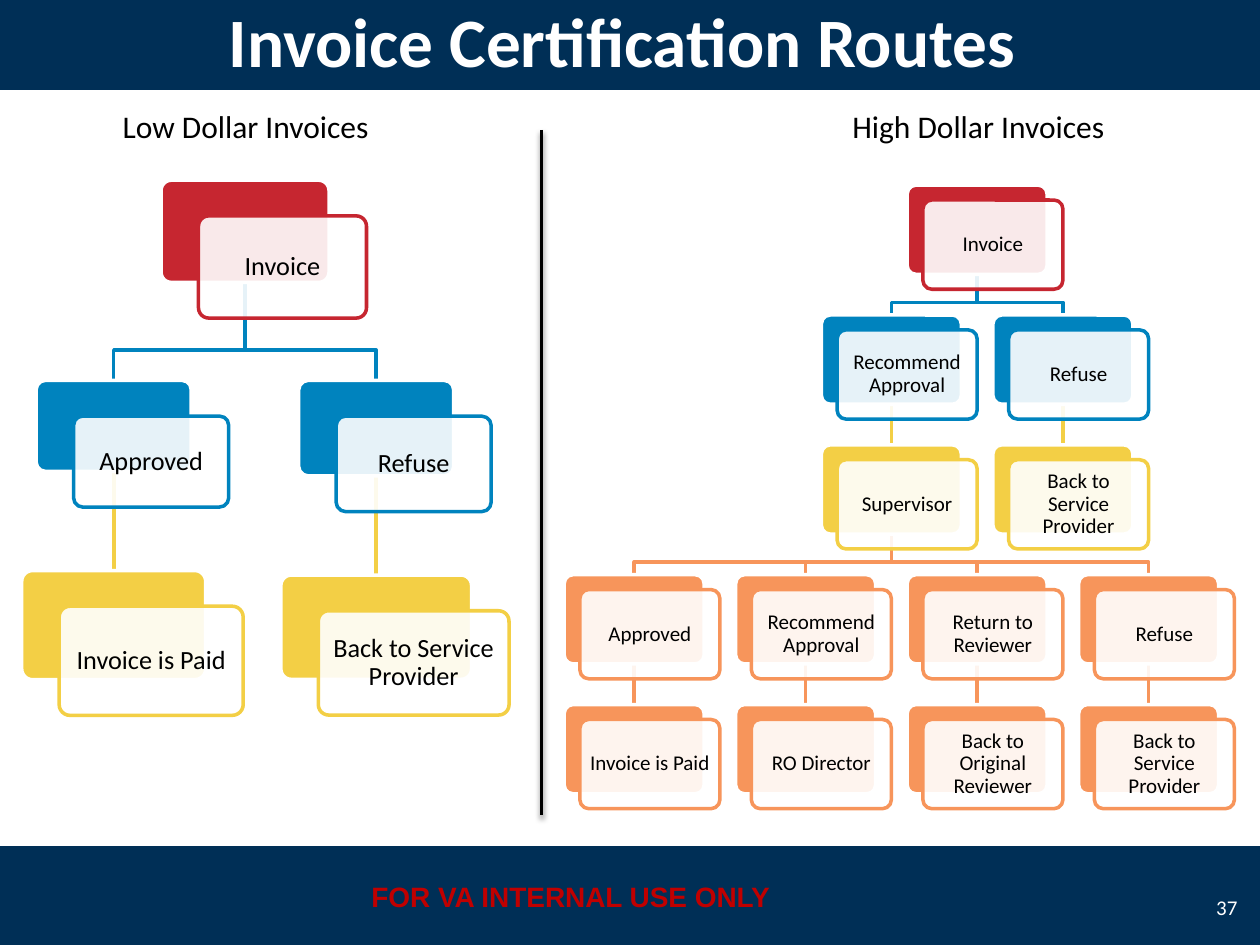
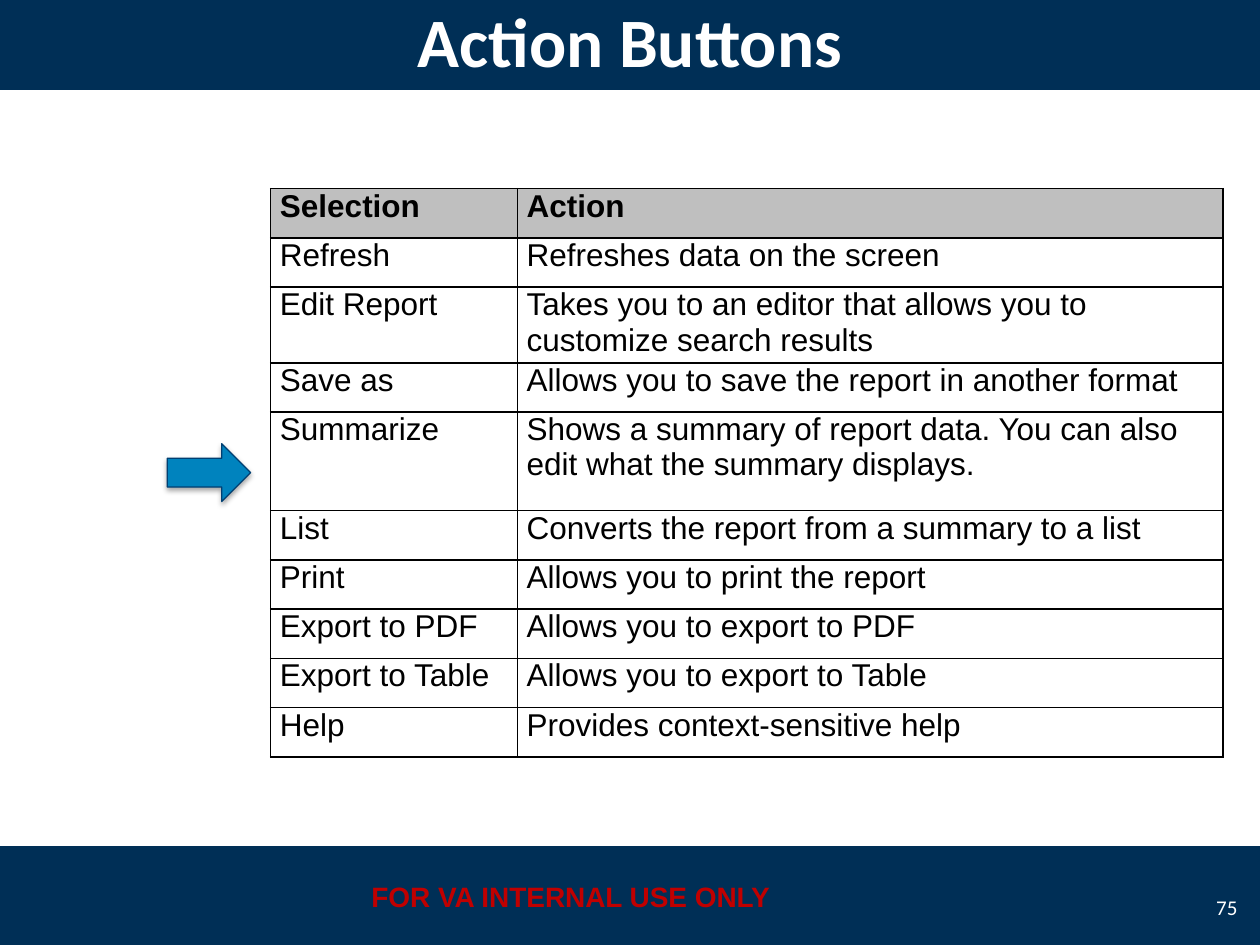
from lxml import etree
from pptx import Presentation
from pptx.dml.color import RGBColor
from pptx.enum.shapes import MSO_CONNECTOR, MSO_SHAPE
from pptx.enum.text import MSO_ANCHOR, PP_ALIGN
from pptx.oxml.ns import qn
from pptx.util import Pt

NAVY = RGBColor(0x00, 0x2F, 0x56)
EDGE = RGBColor(0x00, 0x3F, 0x72)
BLUE = RGBColor(0x00, 0x83, 0xBE)
RED = RGBColor(0xC6, 0x26, 0x30)
GOLD = RGBColor(0xF3, 0xCF, 0x45)
CORAL = RGBColor(0xF7, 0x95, 0x5B)
NOTE = RGBColor(0xC0, 0x00, 0x00)
GREY = RGBColor(0xBF, 0xBF, 0xBF)
BLACK = RGBColor(0x00, 0x00, 0x00)
WHITE = RGBColor(0xFF, 0xFF, 0xFF)

RECT, ROUND, ARROW = MSO_SHAPE.RECTANGLE, MSO_SHAPE.ROUNDED_RECTANGLE, MSO_SHAPE.RIGHT_ARROW
STRAIGHT = MSO_CONNECTOR.STRAIGHT
LEFT, CENTER, RIGHT = PP_ALIGN.LEFT, PP_ALIGN.CENTER, PP_ALIGN.RIGHT
TOP, MIDDLE = MSO_ANCHOR.TOP, MSO_ANCHOR.MIDDLE

LOW = [
    ("Invoice", RED, None, (140, 103, 96, 58.4)),
    ("Approved", BLUE, 0, (65, 217.4, 88.6, 52)),
    ("Refuse", BLUE, 0, (215, 217.4, 88.6, 54.6)),
    ("Invoice is Paid", GOLD, 1, (65, 326, 105.2, 62.4)),
    ("Back to Service Provider", GOLD, 2, (215, 328.6, 109, 59.6)),
]

HIGH = [
    ("Invoice", RED, None, 2, 0),
    ("Recommend Approval", BLUE, 0, 1.5, 1),
    ("Refuse", BLUE, 0, 2.5, 1),
    ("Supervisor", GOLD, 1, 1.5, 2),
    ("Back to Service Provider", GOLD, 2, 2.5, 2),
    ("Approved", CORAL, 3, 0, 3),
    ("Recommend Approval", CORAL, 3, 1, 3),
    ("Return to Reviewer", CORAL, 3, 2, 3),
    ("Refuse", CORAL, 3, 3, 3),
    ("Invoice is Paid", CORAL, 5, 0, 4),
    ("RO Director", CORAL, 6, 1, 4),
    ("Back to Original Reviewer", CORAL, 7, 2, 4),
    ("Back to Service Provider", CORAL, 8, 3, 4),
]

ACTIONS = [
    ("Selection", "Action"),
    ("Refresh", "Refreshes data on the screen"),
    ("Edit Report", "Takes you to an editor that allows you to customize search results"),
    ("Save as", "Allows you to save the report in another format"),
    ("Summarize", "Shows a summary of report data. You can also edit what the summary displays."),
    ("List", "Converts the report from a summary to a list"),
    ("Print", "Allows you to print the report"),
    ("Export to PDF", "Allows you to export to PDF"),
    ("Export to Table", "Allows you to export to Table"),
    ("Help", "Provides context-sensitive help"),
]


class Deck:
    """Draws styled elements on the current slide."""

    def __init__(self):
        self.prs = Presentation()
        self.prs.slide_width, self.prs.slide_height = Pt(720), Pt(540)
        self.shapes = None

    def page(self, title, number):
        self.shapes = self.prs.slides.add_slide(self.prs.slide_layouts[6]).shapes
        self.box(RECT, (0, 483.6, 720, 56.4), NAVY)
        self.text("FOR VA INTERNAL USE ONLY", (184.4, 499, 283.6, 26.6), 16, NOTE,
                  CENTER, font="Arial", bold=True)
        band = self.box(RECT, (0, -6, 720, 57.5), NAVY)
        self.label(band.text_frame, title, 39.6, WHITE, CENTER, MIDDLE, bold=True)
        self.text(number, (684, 504, 30.2, 28.8), 12, WHITE, RIGHT, MIDDLE)

    def label(self, frame, text, size, color=BLACK, align=LEFT, anchor=TOP,
              font="Calibri", bold=False):
        frame.word_wrap = True
        frame.vertical_anchor = anchor
        para = frame.paragraphs[0]
        para.text, para.alignment = text, align
        para.font.name, para.font.size, para.font.bold = font, Pt(size), bold
        para.font.color.rgb = color
        return para

    def text(self, text, area, *style, **more):
        frame = self.shapes.add_textbox(*map(Pt, area)).text_frame
        self.label(frame, text, *style, **more)

    def shade(self, shape, alpha=0, drop=0):
        props = shape._element.spPr
        effects = etree.SubElement(props, qn("a:effectLst"))
        if alpha:
            outer = etree.SubElement(effects, qn("a:outerShdw"), blurRad=str(Pt(3.1)),
                                     dist=str(Pt(drop)), dir="5400000", rotWithShape="0")
            color = etree.SubElement(outer, qn("a:srgbClr"), val=str(BLACK))
            etree.SubElement(color, qn("a:alpha"), val=str(alpha * 1000))

    def box(self, kind, area, fill, line=None, width=2, alpha=0, drop=0):
        shape = self.shapes.add_shape(kind, *map(Pt, area))
        shape.fill.solid()
        shape.fill.fore_color.rgb = fill
        if line is None:
            shape.line.fill.background()
        else:
            self.stroke(shape, line, width)
        self.shade(shape, alpha, drop)
        return shape

    def stroke(self, shape, color, width=2):
        shape.line.color.rgb = color
        shape.line.width = Pt(width)

    def line(self, start, end, color, alpha=0, drop=0):
        line = self.shapes.add_connector(STRAIGHT, *map(Pt, start + end))
        self.stroke(line, color)
        self.shade(line, alpha, drop)
        return line

    def card(self, text, color, area, shift, size):
        x, y, w, h = area
        back = self.box(ROUND, area, color, WHITE)
        front = self.box(ROUND, (x + shift[0], y + shift[1], w, h), WHITE, color)
        for shape in (back, front):
            shape.adjustments[0] = 0.1
        tint = front._element.spPr.find(qn("a:solidFill"))[0]
        etree.SubElement(tint, qn("a:alpha"), val="90000")
        frame = front.text_frame
        frame.margin_left = frame.margin_right = Pt(size / 4)
        frame.margin_top = frame.margin_bottom = Pt(size / 4)
        self.label(frame, text, size, BLACK, CENTER, MIDDLE).line_spacing = 0.9
        return back

    def link(self, upper, lower, color):
        x, y = upper.left + upper.width // 2, upper.top + upper.height
        end, low = lower.left + lower.width // 2, lower.top
        if abs(end - x) < Pt(1):
            line = self.line((0, 0), (0, 0), color)
            line.begin_connect(upper, 2)
            line.end_connect(lower, 0)
        else:
            bend = y + int((low - y) * 0.69)
            route = self.shapes.build_freeform(x, y)
            route.add_line_segments([(x, bend), (end, bend), (end, low)], close=False)
            line = route.convert_to_shape()
            line.fill.background()
            self.stroke(line, color)
            self.shade(line)
        line._element.getparent().insert(2, line._element)

    def tree(self, nodes, shift, size):
        cards = []
        for text, color, parent, (mid, y, w, h) in nodes:
            cards.append(self.card(text, color, (mid - w / 2, y, w, h), shift, size))
            if parent is not None:
                self.link(cards[parent], cards[-1], color)

    def table(self, rows, left, top, widths, height, tall):
        area = (left, top, sum(widths), height * (len(rows) + 1))
        grid = self.shapes.add_table(len(rows), len(widths), *map(Pt, area)).table
        grid.first_row = grid.horz_banding = False
        for column, width in zip(grid.columns, widths):
            column.width = Pt(width)
        for i, row in enumerate(rows):
            grid.rows[i].height = Pt(height * (2 if i == tall else 1))
            for j, text in enumerate(row):
                self.cell(grid.cell(i, j), text, i == 0)

    def cell(self, cell, text, head):
        cell.margin_left = cell.margin_right = Pt(5.4)
        cell.margin_top = cell.margin_bottom = 0
        para = self.label(cell.text_frame, text, 18, font="Arial", bold=head)
        para.space_after = Pt(3)
        cell.vertical_anchor = TOP
        props = cell._tc.get_or_add_tcPr()
        for side in "LRTB":
            edge = etree.SubElement(props, qn("a:ln" + side), w=str(Pt(1)))
            fill = etree.SubElement(edge, qn("a:solidFill"))
            etree.SubElement(fill, qn("a:srgbClr"), val=str(BLACK))
        if head:
            cell.fill.solid()
            cell.fill.fore_color.rgb = GREY
        else:
            cell.fill.background()


def routes(deck):
    deck.page("Invoice Certification Routes ", "37")
    deck.tree(LOW, (21.4, 20.4), 15)
    high = [(text, color, parent, (362.4 + 98 * col, 105.8 + 74.2 * row, 80, 51))
            for text, color, parent, col, row in HIGH]
    deck.tree(high, (9, 8.5), 12)
    for label, left in (("Low Dollar Invoices", 63), ("High Dollar Invoices", 480)):
        deck.text(label, (left, 57.6, 203.8, 29), 18)
    deck.line((309.5, 74.2), (309.5, 465.8), BLACK, 38, 1.6)


def actions(deck):
    deck.page("Action Buttons", "75")
    deck.table(ACTIONS, 154.6, 107.8, (141, 403.4), 28.15, 4)
    deck.box(ARROW, (95.6, 253.6, 47.6, 33), BLUE, EDGE, 0.75, 35, 1.8)


def main():
    deck = Deck()
    routes(deck)
    actions(deck)
    deck.prs.save("out.pptx")


if __name__ == "__main__":
    main()
